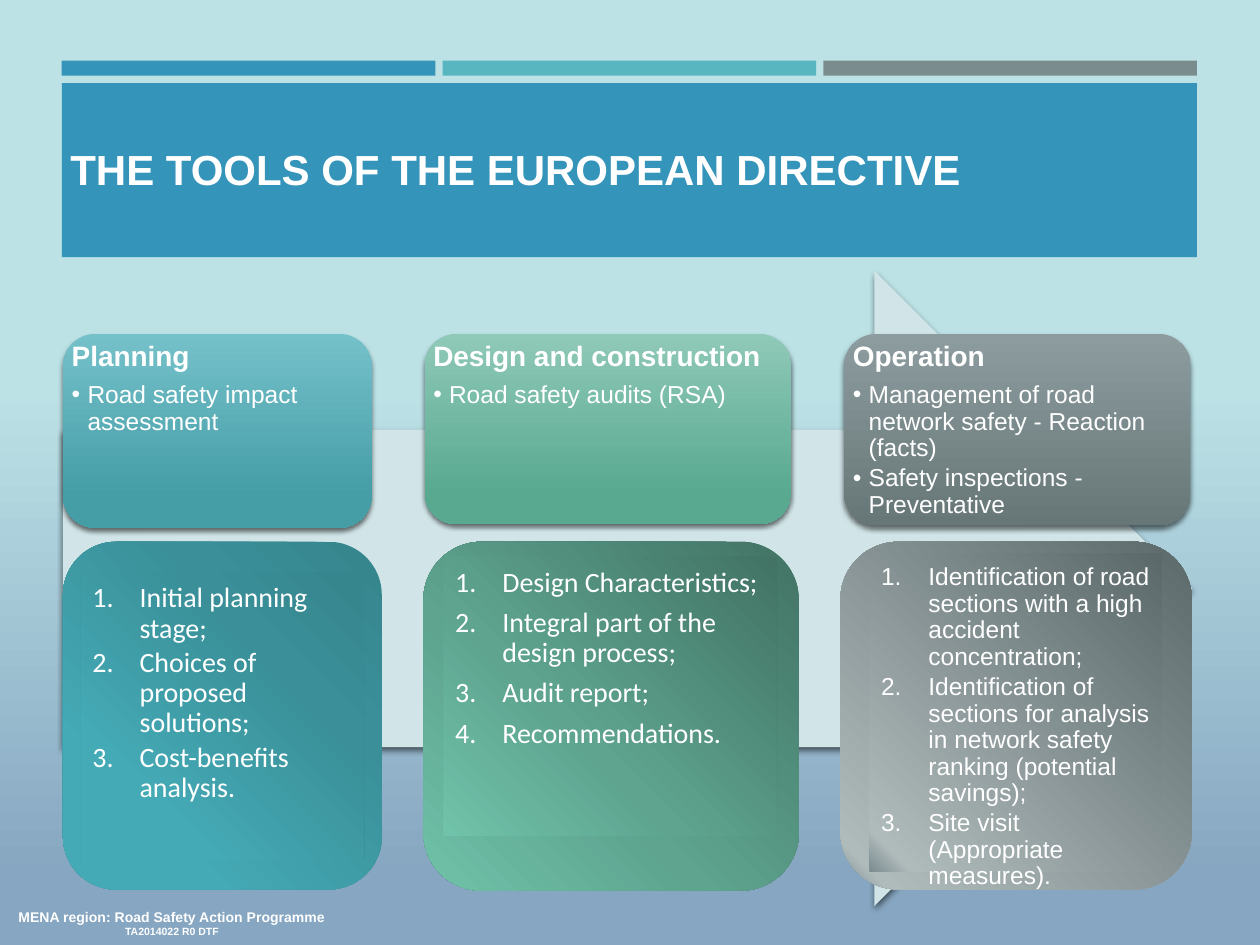
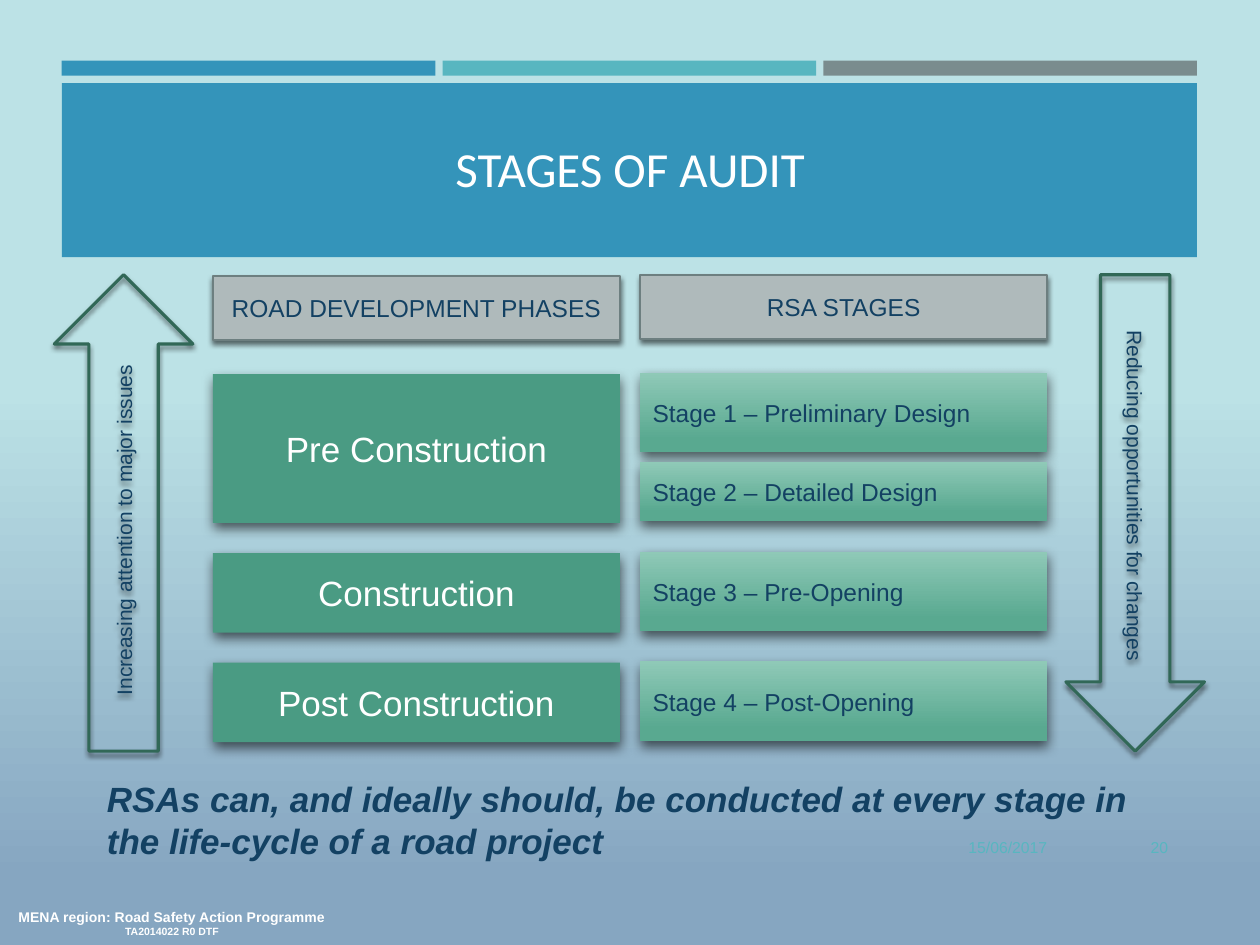
from lxml import etree
from pptx import Presentation
from pptx.dml.color import RGBColor
from pptx.enum.shapes import MSO_SHAPE
from pptx.enum.text import MSO_ANCHOR, PP_ALIGN
from pptx.oxml.ns import qn
from pptx.util import Pt

RECT, ROUND = MSO_SHAPE.RECTANGLE, MSO_SHAPE.ROUNDED_RECTANGLE
RIGHT_ARROW, DOWN_ARROW = MSO_SHAPE.RIGHT_ARROW, MSO_SHAPE.DOWN_ARROW
TOP, MIDDLE, BOTTOM = MSO_ANCHOR.TOP, MSO_ANCHOR.MIDDLE, MSO_ANCHOR.BOTTOM
LEFT, CENTER, RIGHT = PP_ALIGN.LEFT, PP_ALIGN.CENTER, PP_ALIGN.RIGHT

# Colours
WHITE = RGBColor(0xFF, 0xFF, 0xFF)
BLACK = RGBColor(0x00, 0x00, 0x00)
BLUE = RGBColor(0x34, 0x94, 0xBA)
TEAL = RGBColor(0x58, 0xB6, 0xC0)
GREY = RGBColor(0x7A, 0x8C, 0x8E)
NAVY = RGBColor(0x13, 0x41, 0x63)
GREEN = RGBColor(0x4A, 0x9B, 0x83)
PINE = RGBColor(0x31, 0x68, 0x57)
SILVER = RGBColor(0xAF, 0xBA, 0xBB)
STEEL = RGBColor(0x6D, 0x7F, 0x80)
ICE = RGBColor(0xD1, 0xE5, 0xE8)
DUSK = RGBColor(0x86, 0xA6, 0xC1)
SKY = RGBColor(0xBC, 0xE2, 0xE6)
AQUA = RGBColor(0x75, 0xC1, 0xCA)
LAGOON = RGBColor(0x45, 0x9D, 0xA6)
MINT = RGBColor(0x8F, 0xC9, 0xB7)
JADE = RGBColor(0x59, 0xA9, 0x90)
ASH = RGBColor(0x8D, 0x9C, 0x9E)
STONE = RGBColor(0x67, 0x76, 0x77)
POOL = RGBColor(0x44, 0xAA, 0xB5)
BAY = RGBColor(0x3A, 0x8F, 0x98)
DEEP = RGBColor(0x36, 0x86, 0x8E)
MOSS = RGBColor(0x42, 0x73, 0x64)
SAGE = RGBColor(0x5E, 0xA4, 0x8F)
LIME = RGBColor(0x70, 0xC2, 0xA9)
SLATE = RGBColor(0x5B, 0x69, 0x6B)

# Gradients: stops (percent, colour) and angle, None for a corner glow
BACK = ([(7, DUSK), (59, SKY)], 270)
TEAL_HEAD = ([(0, AQUA), (84, LAGOON)], 90)
GREEN_HEAD = ([(0, MINT), (84, JADE)], 90)
GREY_HEAD = ([(0, ASH), (100, STONE)], 90)
TEAL_BODY = ([(0, POOL), (23, POOL), (69, BAY), (97, DEEP)], None)
GREEN_BODY = ([(0, MOSS), (61, SAGE), (100, LIME)], 135)
GREY_BODY = ([(0, GREY), (7, SILVER), (100, SLATE)], 315)

# Shadows: opacity, blur, distance, angle
SOFT = (55, 3, 2, 90)
STRONG = (60, 7, 3, 84)

SANS, HUMAN = "Arial", "Calibri"


def sub(parent, tag, **attrs):
    node = etree.SubElement(parent, qn(tag))
    for key, value in attrs.items():
        node.set(key, str(value))
    return node


def shade(fill, root, grad):
    """Give a fill a gradient in place of a solid colour."""
    stops, angle = grad
    fill.solid()
    solid = next(root.iter(qn("a:solidFill")))
    node = etree.Element(qn("a:gradFill"), rotWithShape="1")
    group = sub(node, "a:gsLst")
    for pos, color in stops:
        sub(sub(group, "a:gs", pos=pos * 1000), "a:srgbClr", val=color)
    if angle is None:
        glow = sub(node, "a:path", path="circle")
        sub(glow, "a:fillToRect", t=100000, r=100000)
    else:
        sub(node, "a:lin", ang=angle * 60000, scaled=0)
    solid.getparent().replace(solid, node)


def draw(slide, kind, box, fill=None, line=None, shadow=None):
    shape = slide.shapes.add_shape(kind, *map(Pt, box))
    shape.shadow.inherit = False
    if fill is None:
        shape.fill.background()
    elif isinstance(fill, tuple) and not isinstance(fill, RGBColor):
        shade(shape.fill, shape._element.spPr, fill)
    else:
        shape.fill.solid()
        shape.fill.fore_color.rgb = fill
    if line:
        shape.line.color.rgb, shape.line.width = line[0], Pt(line[1])
    else:
        shape.line.fill.background()
    if shadow:
        alpha, blur, dist, angle = shadow
        effect = shape._element.spPr.find(qn("a:effectLst"))
        drop = sub(effect, "a:outerShdw", blurRad=Pt(blur), dist=Pt(dist),
                   dir=angle * 60000, algn="ctr", rotWithShape=0)
        sub(sub(drop, "a:srgbClr", val=BLACK), "a:alpha", val=alpha * 1000)
    return shape


def setup(shape, anchor=TOP, inset=None):
    frame = shape.text_frame
    frame.word_wrap = True
    frame.vertical_anchor = anchor
    if inset is not None:
        frame.margin_left = frame.margin_right = Pt(inset)
        frame.margin_top = frame.margin_bottom = Pt(inset)
    return frame


def note(slide, box, anchor=TOP, inset=None):
    return setup(slide.shapes.add_textbox(*map(Pt, box)), anchor, inset)


def write(para, text, size, color=WHITE, font=SANS, bold=False, slant=False,
          align=LEFT):
    para.alignment = align
    run = para.add_run()
    run.text = text
    face = run.font
    face.name, face.size, face.bold, face.italic = font, Pt(size), bold, slant
    face.color.rgb = color


def space(para, after):
    para.line_spacing = 0.9
    para.space_after = Pt(after)


def mark(para, indent, tag, **attrs):
    """Add a hanging bullet or number."""
    props = para._p.get_or_add_pPr()
    props.set("marL", str(Pt(indent)))
    props.set("indent", str(-Pt(indent)))
    sub(props, "a:buFont", typeface=SANS)
    sub(props, tag, **attrs)


def base(deck, title, box, **style):
    """Background, bands, footer and title of every slide."""
    slide = deck.slides.add_slide(deck.slide_layouts[6])
    shade(slide.background.fill, slide._element, BACK)
    for i, color in enumerate((BLUE, TEAL, GREY)):
        draw(slide, RECT, (35.3 + i * 217.6, 34.6, 213.5, 8.6), color)
    foot = note(slide, (1.4, 515.5, 193.7, 24.5)).paragraphs[0]
    foot.space_before = foot.space_after = Pt(3)
    write(foot, "MENA region: Road Safety Action Programme", 8, bold=True)
    foot.add_line_break()
    write(foot, "TA2014022 R0 DTF", 6, bold=True, align=CENTER)
    draw(slide, RECT, (35.3, 47.5, 648.7, 99.4), BLUE)
    write(note(slide, box, BOTTOM).paragraphs[0], title, **style)
    return slide


def head(slide, box, fill, name, tools):
    """Phase heading with its tools."""
    draw(slide, ROUND, box, fill, shadow=SOFT)
    frame = note(slide, box, inset=5)
    first = frame.paragraphs[0]
    space(first, 5.6)
    write(first, name, 16, bold=True)
    for tool in tools:
        para = frame.add_paragraph()
        space(para, 2.1)
        mark(para, 9, "a:buChar", char="•")
        write(para, tool, 14)


def body(slide, box, inner, fill, items, size, font, after):
    """Rounded panel with a numbered list; inner is relative to box."""
    draw(slide, ROUND, box, fill)
    dx, dy, width, height = inner
    panel = draw(slide, RECT, (box[0] + dx, box[1] + dy, width, height), fill)
    frame = setup(panel, inset=6.7)
    for i, item in enumerate(items):
        para = frame.add_paragraph() if i else frame.paragraphs[0]
        space(para, after)
        mark(para, 27, "a:buAutoNum", type="arabicPeriod")
        write(para, item, size, font=font)


def label(shape, text, size, color, align=CENTER):
    frame = setup(shape, MIDDLE)
    write(frame.paragraphs[0], text, size, color, align=align)
    return frame


def board(slide, x, y, name, cells, fill, size, color, align):
    """Column of cells (text, offset, height) under a grey heading."""
    width = 232.6
    top = draw(slide, RECT, (x, y, width, 36.7), SILVER, (STEEL, 1), SOFT)
    label(top, name, 14, NAVY)
    for text, dy, height in cells:
        cell = draw(slide, RECT, (x, y + dy, width, height), fill,
                    shadow=STRONG)
        label(cell, text, size, color, align)


def arrow(slide, x, text, turn):
    shape = draw(slide, DOWN_ARROW, (x, 157, 79.2, 272.2), None,
                 (PINE, 1.75), SOFT)
    shape.rotation = turn
    frame = label(shape, text, 12, NAVY)
    frame._txBody.bodyPr.set("vert", "vert")


def tools(deck):
    slide = base(deck, "THE TOOLS OF THE EUROPEAN DIRECTIVE",
                 (33.1, 24.5, 648, 90), size=24, bold=True)
    draw(slide, RIGHT_ARROW, (36, 154.8, 645.1, 362.9), ICE, shadow=SOFT)
    # Headings
    y = 190.8
    head(slide, (36, y, 176.4, 110.9), TEAL_HEAD, "Planning",
         ["Road safety impact assessment"])
    head(slide, (242.6, y, 209.5, 108.7), GREEN_HEAD,
         "Design and construction", ["Road safety audits (RSA)"])
    head(slide, (482.4, y, 198, 109.4), GREY_HEAD, "Operation",
         ["Management of road network safety - Reaction (facts)",
          "Safety inspections - Preventative"])
    # Lists
    y = 309.6
    body(slide, (36, y, 182.2, 198.7), (10.1, 17.3, 162, 164.2), TEAL_BODY,
         ["Initial planning stage;", "Choices of proposed solutions;",
          "Cost-benefits analysis."], 16, HUMAN, 2.4)
    body(slide, (241.9, y, 214.6, 199.4), (11.5, 8.6, 190.8, 159.1),
         GREEN_BODY,
         ["Design Characteristics;", "Integral part of the design process;",
          "Audit report;", "Recommendations."], 16, HUMAN, 5.6)
    body(slide, (480.2, y, 200.9, 198.7), (16.6, 6.5, 167, 182.2), GREY_BODY,
         ["Identification of road sections with a high accident "
          "concentration;",
          "Identification of sections for analysis in network safety ranking "
          "(potential savings);",
          "Site visit (Appropriate measures)."], 14, SANS, 2.1)


def stages(deck):
    slide = base(deck, "STAGES OF AUDIT", (36.7, 54, 646.6, 62.6),
                 size=28, font=HUMAN, align=CENTER)
    # Date and page number
    for text, x in (("15/06/2017", 505.5), ("20", 574.6)):
        para = note(slide, (x, 474, 100, 20), MIDDLE).paragraphs[0]
        write(para, text, 9, TEAL, align=RIGHT)
    # Closing line
    para = note(slide, (54, 440.6, 601.2, 55.4)).paragraphs[0]
    write(para, "RSAs can, and ideally should, be conducted at every stage in "
          "the life-cycle of a road project", 20, NAVY, bold=True, slant=True)
    # Phases beside their audit stages
    row1, row2, row3, tall = 56.1, 158.4, 221, 45.4
    board(slide, 121.7, 157.7, "ROAD DEVELOPMENT PHASES",
          [("Pre Construction", row1, 85), ("Construction", row2, tall),
           ("Post Construction", row3, tall)], GREEN, 20, WHITE, CENTER)
    board(slide, 365.8, 157, "RSA STAGES",
          [("Stage 1 – Preliminary Design", row1, tall),
           ("Stage 2 – Detailed Design", 107.2, 33.8),
           ("Stage 3 – Pre-Opening", row2, tall),
           ("Stage 4 – Post-Opening", row3, tall)],
          GREEN_HEAD, 14, NAVY, LEFT)
    # Side arrows
    arrow(slide, 609.1, "Reducing opportunities for changes", 0)
    arrow(slide, 31, "Increasing attention to major issues", 180)


def main():
    deck = Presentation()
    deck.slide_width, deck.slide_height = Pt(720), Pt(540)
    tools(deck)
    stages(deck)
    deck.save("out.pptx")


if __name__ == "__main__":
    main()
